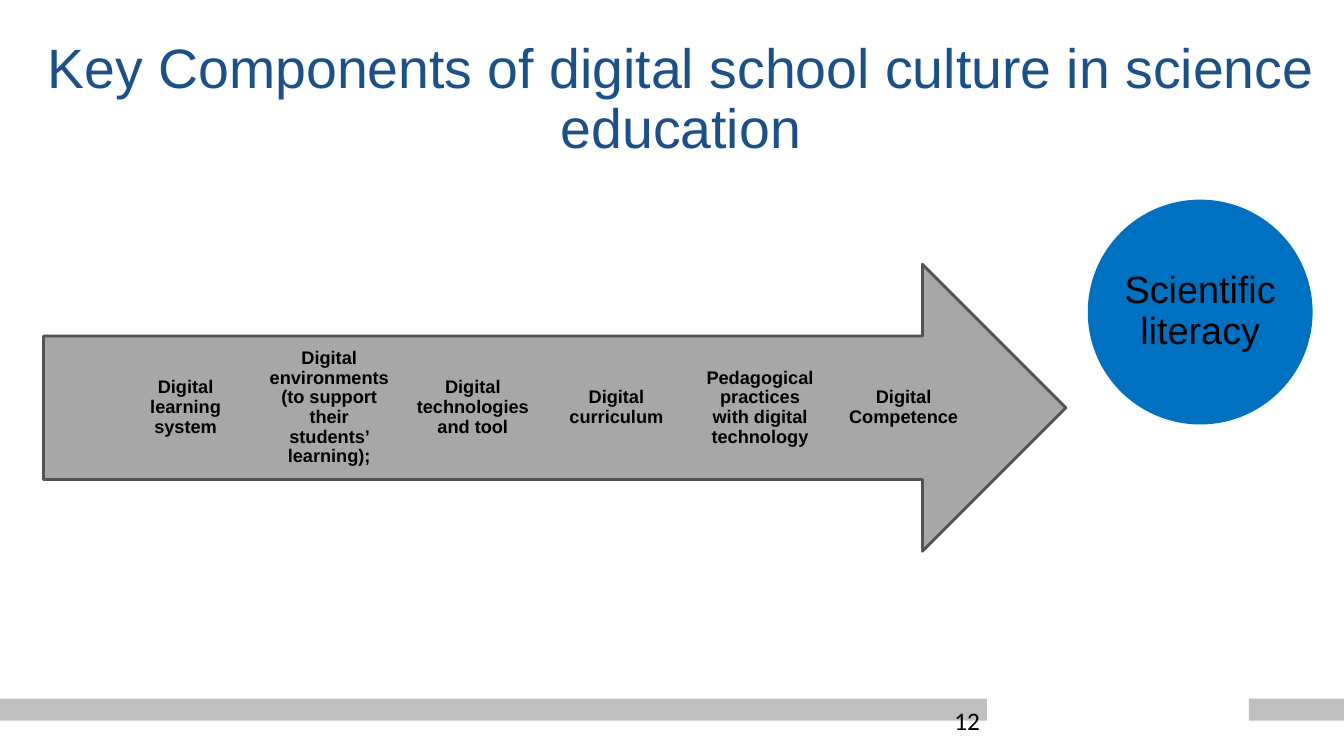
from dataclasses import dataclass

import pptx
import pptx.dml.color
import pptx.enum.shapes
import pptx.enum.text
import pptx.shapes.autoshape
import pptx.slide
import pptx.util

COLORS = {
    "title": "1B5089",
    "text": "000000",
    "bar": "BFBFBF",
    "arrow": "A7A7A7",
    "arrow_line": "535353",
    "circle": "0070C0",
}
SHAPES = pptx.enum.shapes.MSO_SHAPE
ANCHORS = pptx.enum.text.MSO_ANCHOR
ALIGNMENTS = pptx.enum.text.PP_ALIGN


@dataclass
class Frame:
    left: float
    top: float
    width: float
    height: float

    def lengths(self) -> list[pptx.util.Length]:
        return [pptx.util.Pt(v) for v in (self.left, self.top, self.width, self.height)]


@dataclass
class Figure:
    kind: SHAPES
    frame: Frame
    fill: str
    line: str | None = None


@dataclass
class Label:
    text: str
    frame: Frame
    size: float
    color: str = "text"
    font: str = "Arial"
    bold: bool = False
    centered: bool = True
    wrap: bool = True
    inset_x: float = 3.6
    inset_y: float = 3.6


def color_of(name: str) -> pptx.dml.color.RGBColor:
    return pptx.dml.color.RGBColor.from_string(COLORS[name])


def draw_figure(page: pptx.slide.Slide, figure: Figure) -> pptx.shapes.autoshape.Shape:
    shape = page.shapes.add_shape(figure.kind, *figure.frame.lengths())
    shape.shadow.inherit = False
    shape.fill.solid()
    shape.fill.fore_color.rgb = color_of(figure.fill)
    if figure.line:
        shape.line.color.rgb = color_of(figure.line)
        shape.line.width = pptx.util.Pt(2)
    else:
        shape.line.fill.background()
    return shape


def draw_label(page: pptx.slide.Slide, label: Label) -> None:
    box = page.shapes.add_textbox(*label.frame.lengths())
    frame = box.text_frame
    frame.word_wrap = label.wrap
    frame.margin_left = frame.margin_right = pptx.util.Pt(label.inset_x)
    frame.margin_top = frame.margin_bottom = pptx.util.Pt(label.inset_y)
    para = frame.paragraphs[0]
    para.text = label.text
    if label.centered:
        frame.vertical_anchor = ANCHORS.MIDDLE
        para.alignment = ALIGNMENTS.CENTER
        para.line_spacing = 0.9
    para.font.name = label.font
    para.font.size = pptx.util.Pt(label.size)
    para.font.bold = label.bold
    para.font.color.rgb = color_of(label.color)


FIGURES = [
    Figure(SHAPES.RECTANGLE, Frame(0, 499, 704.9, 15.8), "bar"),
    Figure(SHAPES.RECTANGLE, Frame(892.1, 499, 67.9, 15.8), "bar"),
    Figure(SHAPES.RIGHT_ARROW, Frame(31, 188.8, 730.4, 205), "arrow", "arrow_line"),
    Figure(SHAPES.OVAL, Frame(777, 142.6, 160.6, 160.6), "circle"),
]
COMPONENTS = [
    "Digital learning system",
    "Digital environments (to support their students’ learning);",
    "Digital technologies and tool",
    "Digital curriculum",
    "Pedagogical practices with digital technology",
    "Digital Competence",
]
COMPONENT_LEFT = 89.8
COMPONENT_STEP = 102.58
LABELS = [
    Label(
        "Key Components of digital school culture in science education",
        Frame(25.2, 40.6, 922.3, 62.6), 39.6, "title",
    ),
    *(
        Label(
            text, Frame(COMPONENT_LEFT + COMPONENT_STEP * index, 240, 85.5, 102.5),
            13, bold=True, inset_x=0, inset_y=10,
        )
        for index, text in enumerate(COMPONENTS)
    ),
    Label("Scientific literacy", Frame(800.5, 166.1, 113.6, 113.6), 27, inset_x=0, inset_y=2.9),
    Label("12", Frame(678.2, 500.4, 26.6, 25.9), 18, font="Calibri", centered=False, wrap=False),
]


def main() -> None:
    deck = pptx.Presentation()
    deck.slide_width = pptx.util.Pt(960)
    deck.slide_height = pptx.util.Pt(540)
    page = deck.slides.add_slide(deck.slide_layouts[6])
    for figure in FIGURES:
        draw_figure(page, figure)
    for label in LABELS:
        draw_label(page, label)
    deck.save("out.pptx")


if __name__ == "__main__":
    main()
